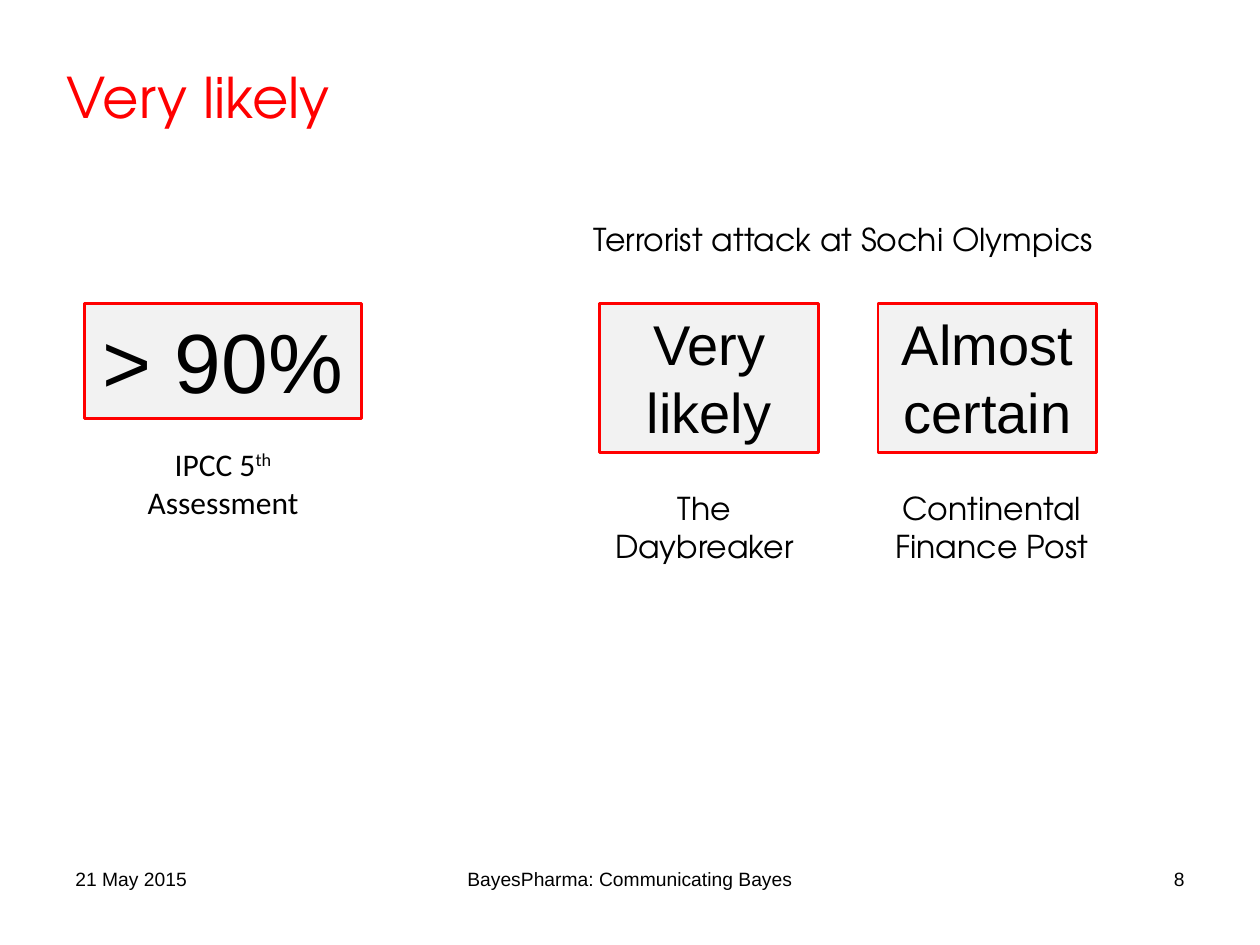
import pptx
import pptx.dml.color
import pptx.enum.shapes
import pptx.enum.text
import pptx.util

Pt = pptx.util.Pt
RGBColor = pptx.dml.color.RGBColor
Align = pptx.enum.text.PP_ALIGN
Anchor = pptx.enum.text.MSO_ANCHOR

RED = RGBColor(0xFF, 0x00, 0x00)
BLACK = RGBColor(0x00, 0x00, 0x00)
PALE_GREY = RGBColor(0xF2, 0xF2, 0xF2)

HEADING_FONT = "TeX Gyre Adventor"
BODY_FONT = "Arial"
SOURCE_FONT = "Calibri"

CARD_TOP = 173.5
FOOTER_TOP = 491.8
SUPERSCRIPT = "30000"


class SlideBuilder:
    def __init__(self, deck):
        self.page = deck.slides.add_slide(deck.slide_layouts[5])

    def set_text(self, box, spans, size, font, color=BLACK, align=Align.LEFT,
                 anchor=Anchor.TOP):
        """Fill a box with one paragraph; spans are (text, is_superscript) pairs."""
        frame = box.text_frame
        frame.word_wrap = True
        frame.vertical_anchor = anchor
        para = frame.paragraphs[0]
        para.alignment = align
        para.font.size = Pt(size)
        para.font.name = font
        para.font.color.rgb = color
        for text, is_superscript in spans:
            span = para.add_run()
            span.text = text
            if is_superscript:
                span._r.get_or_add_rPr().set("baseline", SUPERSCRIPT)

    def title(self, text, left, top, width, height):
        box = self.page.shapes.title
        box.left, box.top, box.width, box.height = map(Pt, (left, top, width, height))
        self.set_text(box, [(text, False)], 32, HEADING_FONT, RED, anchor=Anchor.MIDDLE)

    def label(self, spans, left, top, width, height, size=18, font=HEADING_FONT,
              align=Align.CENTER):
        box = self.page.shapes.add_textbox(*map(Pt, (left, top, width, height)))
        self.set_text(box, spans, size, font, align=align)

    def card(self, text, left, width, height, size):
        box = self.page.shapes.add_shape(
            pptx.enum.shapes.MSO_SHAPE.RECTANGLE,
            *map(Pt, (left, CARD_TOP, width, height)))
        box.shadow.inherit = False
        box.fill.solid()
        box.fill.fore_color.rgb = PALE_GREY
        box.line.color.rgb = RED
        box.line.width = Pt(1.5)
        self.set_text(box, [(text, False)], size, BODY_FONT, align=Align.CENTER)

    def footer(self, text, left, width, align):
        self.label([(text, False)], left, FOOTER_TOP, width, 37.5, 11, BODY_FONT, align)


def main():
    deck = pptx.Presentation()
    deck.slide_width, deck.slide_height = Pt(720), Pt(540)
    builder = SlideBuilder(deck)

    builder.title("Very likely", 31, 21.6, 648, 67)

    builder.card("> 90%", 48.2, 158.4, 65.5, 48)
    builder.label([("IPCC 5", False), ("th", True), (" Assessment", False)],
                  76.3, 250.6, 102.2, 51, font=SOURCE_FONT)

    builder.label([("Terrorist attack at Sochi Olympics", False)],
                  331.9, 122.4, 306, 29, align=Align.LEFT)
    newspapers = [
        ("Very likely", 342.7, "The Daybreaker", 337, 131),
        ("Almost certain", 501.8, "Continental Finance Post", 495.4, 142.6),
    ]
    for phrase, card_left, newspaper, label_left, label_width in newspapers:
        builder.card(phrase, card_left, 125, 85, 32)
        builder.label([(newspaper, False)], label_left, 275.8, label_width, 51)

    builder.footer("21 May 2015", 36, 168, Align.LEFT)
    builder.footer("BayesPharma: Communicating Bayes", 229.7, 260.6, Align.CENTER)
    builder.footer("8", 516, 168, Align.RIGHT)

    deck.save("out.pptx")


if __name__ == "__main__":
    main()
